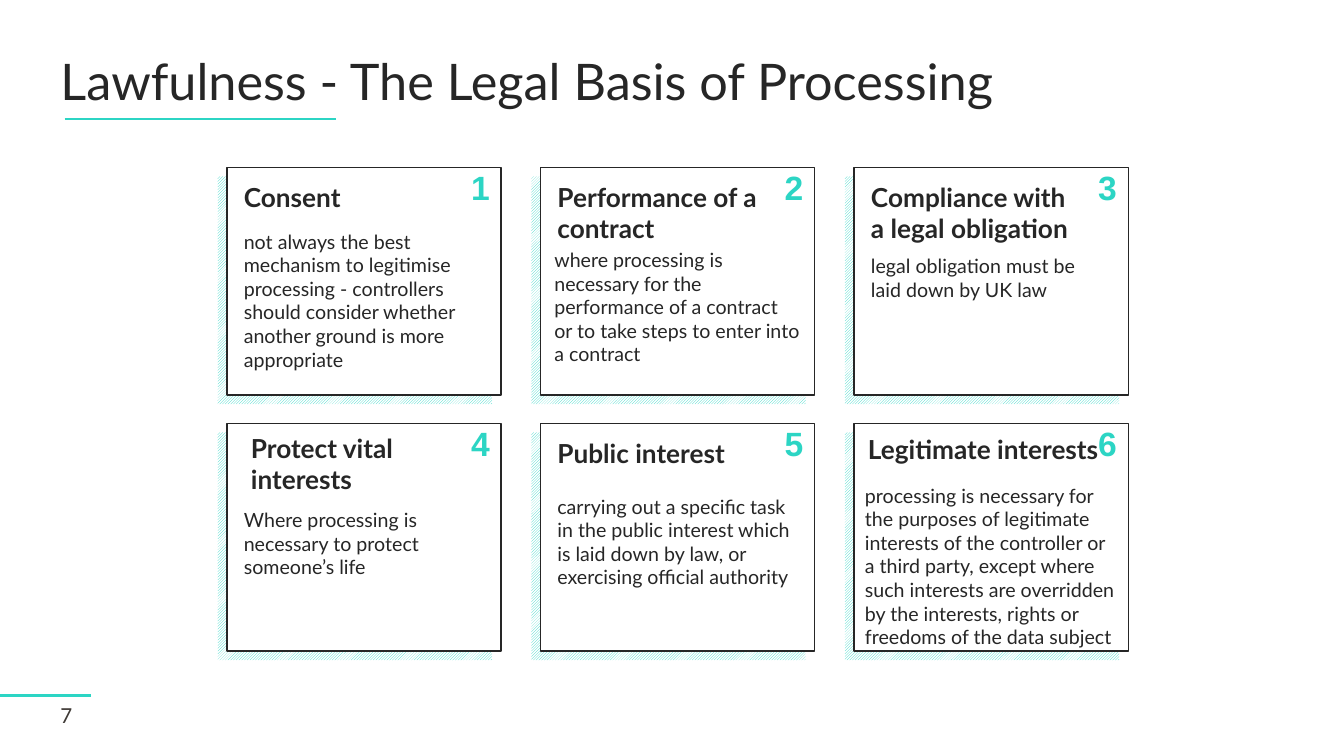
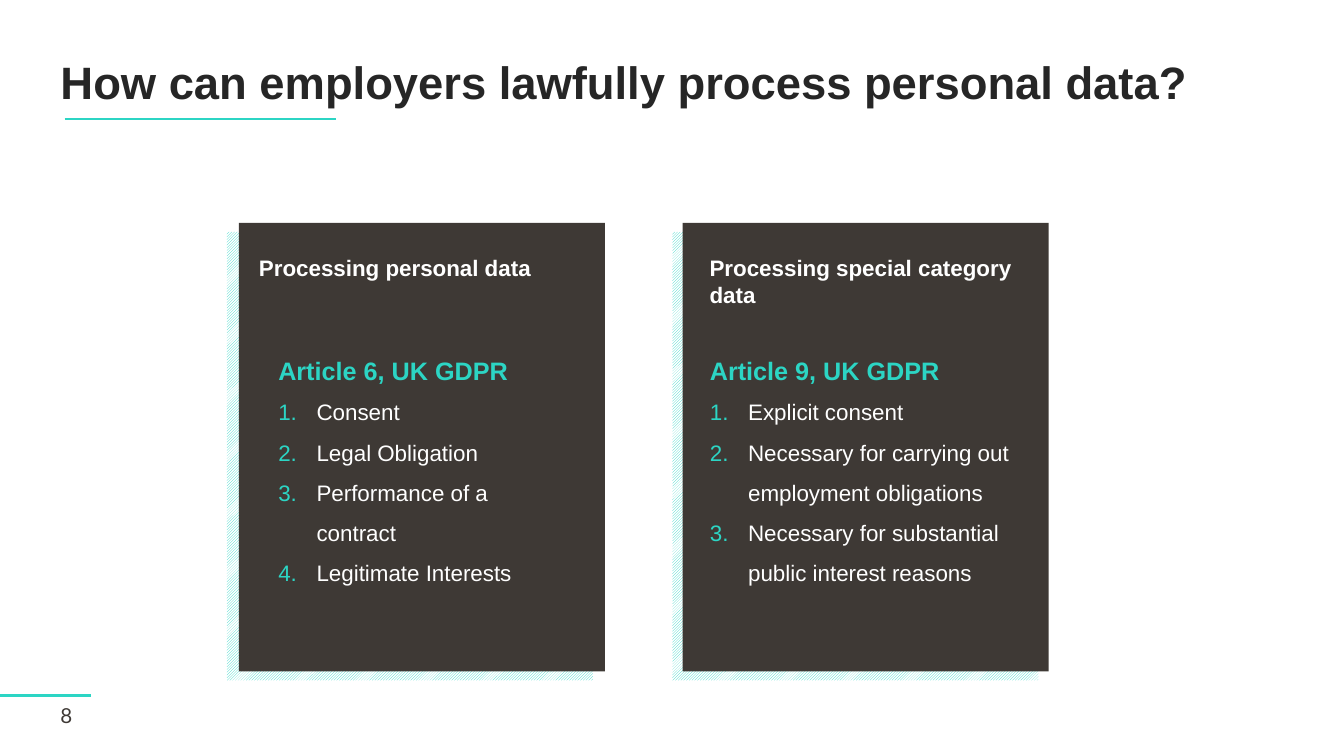
from lxml.etree import SubElement
from pptx import Presentation
from pptx.dml.color import RGBColor
from pptx.enum.dml import MSO_PATTERN
from pptx.enum.shapes import MSO_CONNECTOR, MSO_SHAPE
from pptx.enum.text import MSO_ANCHOR, MSO_AUTO_SIZE, PP_ALIGN
from pptx.oxml.ns import qn
from pptx.util import Inches, Pt

COLORS = {"teal": "2CD5C4", "ink": "262626", "brown": "3E3935", "white": "FFFFFF"}

CARDS = [
    ("Consent", (0.07, 0.09, 2.18, 0.42),
     "not always the best mechanism to legitimise processing - controllers "
     "should consider whether another ground is more appropriate",
     (0.07, 0.57, 2.54, 1.51)),
    ("Performance of a contract", (0.07, 0.09, 2.18, 0.73),
     "where processing is necessary for the performance of a contract "
     "or to take steps to enter into a contract",
     (0.04, 0.75, 2.64, 1.28)),
    ("Compliance with a legal obligation", (0.07, 0.09, 2.18, 0.73),
     "legal obligation must be laid down by UK law",
     (0.07, 0.81, 2.54, 0.57)),
    ("Protect vital interests", (0.14, 0.04, 2.36, 0.73),
     "Where processing is necessary to protect someone’s life",
     (0.07, 0.79, 2.54, 0.81)),
    ("Public interest", (0.07, 0.09, 2.18, 0.42),
     "carrying out a specific task in the public interest which is laid down "
     "by law, or\nexercising official authority",
     (0.07, 0.66, 2.54, 1.04)),
    ("Legitimate interests", (0.04, 0.05, 2.54, 0.42),
     "processing is necessary for the purposes of legitimate interests of the "
     "controller or a third party, except where such interests are overridden "
     "by the interests, rights or freedoms of the data subject",
     (0.01, 0.55, 2.72, 1.75)),
]

PANELS = [
    (2.37, 0.12, "Processing personal data", (2.47, 2.47, 3.12, 0.37),
     "Article 6, UK GDPR", (2.66, 3.32, 2.85, 2.57),
     ["Consent", "Legal Obligation", "Performance of a contract",
      "Legitimate Interests"]),
    (6.77, 0.1, "Processing special category data", (6.94, 2.47, 3.3, 0.64),
     "Article 9, UK GDPR", (6.94, 3.32, 3.3, 2.63),
     ["Explicit consent", "Necessary for carrying out employment obligations",
      "Necessary for substantial public interest reasons"]),
]


def tint(name):
    """Return a named colour."""
    return RGBColor.from_string(COLORS[name])


def place(shape, area):
    """Move and size a shape, in inches."""
    shape.left, shape.top, shape.width, shape.height = map(Inches, area)


def style(par, size, color, font="Lato", bold=False):
    """Format the runs of a paragraph."""
    for run in par.runs:
        run.font.size = Pt(size)
        run.font.name = font
        run.font.bold = bold
        run.font.color.rgb = tint(color)


def inset(frame, side, edge):
    """Set the margins of a text frame."""
    frame.margin_left = frame.margin_right = Inches(side)
    frame.margin_top = frame.margin_bottom = Inches(edge)


def write(slide, area, text, size, color, font="Lato", bold=False):
    """Add a wrapped text box and return its frame."""
    frame = slide.shapes.add_textbox(*map(Inches, area)).text_frame
    frame.word_wrap = True
    frame.auto_size = MSO_AUTO_SIZE.SHAPE_TO_FIT_TEXT
    frame.text = text
    for par in frame.paragraphs:
        style(par, size, color, font, bold)
    return frame


def rule(slide, left, right, top):
    """Draw a level teal line."""
    line = slide.shapes.add_connector(
        MSO_CONNECTOR.STRAIGHT, *map(Inches, (left, top, right, top)))
    line.line.color.rgb = tint("teal")
    line.line.width = Pt(1.5)
    SubElement(line._element.spPr, qn("a:effectLst"))


def box(shapes, area):
    """Add a plain rectangle with neither line nor shadow."""
    shape = shapes.add_shape(MSO_SHAPE.RECTANGLE, *map(Inches, area))
    shape.shadow.inherit = False
    shape.line.fill.background()
    return shape


def panel(shapes, area, shift, color):
    """Add a filled box above a hatched one and return the filled box."""
    left, top, width, height = area
    hatch = box(shapes, (left - shift, top + 0.09, width, height)).fill
    hatch.patterned()
    hatch.pattern = MSO_PATTERN.DARK_UPWARD_DIAGONAL
    hatch.fore_color.rgb = tint("teal")
    hatch.back_color.rgb = tint("white")
    front = box(shapes, area)
    front.fill.solid()
    front.fill.fore_color.rgb = tint(color)
    return front


def start(deck, layout, number, text, size, font="Lato", bold=False):
    """Add a slide with its title, rules and number."""
    slide = deck.slides.add_slide(deck.slide_layouts[layout])
    rule(slide, 0.64, 3.33, 1.18)
    rule(slide, 0, 0.9, 6.9)
    title = slide.shapes.title
    place(title, (0.53, 0.4, 12.24, 0.88))
    frame = title.text_frame
    frame.text = text
    frame.auto_size = MSO_AUTO_SIZE.NONE
    frame.vertical_anchor = MSO_ANCHOR.MIDDLE
    inset(frame, 0.07, 0.04)
    par = frame.paragraphs[0]
    par.alignment = PP_ALIGN.LEFT
    par.line_spacing = 0.9
    style(par, size, "ink", font, bold)
    foot = write(slide, (0.53, 6.98, 0.57, 0.24), str(number), 14.7, "brown")
    foot.auto_size = MSO_AUTO_SIZE.NONE
    foot.vertical_anchor = MSO_ANCHOR.MIDDLE
    inset(foot, 0.07, 0.04)
    return slide


def card(slide, index, head, spot, body, room):
    """Add one numbered card of the grid."""
    row, col = divmod(index, 3)
    left, top = 2.25 + 3.11 * col, 1.66 + 2.54 * row
    group = slide.shapes.add_group_shape()
    front = panel(group.shapes, (left, top, 2.72, 2.26), 0.09, "white")
    front.line.color.rgb = tint("ink")
    front.line.width = Pt(1)
    for text, area, size, bold in ((head, spot, 18.7, True), (body, room, 14, False)):
        dx, dy, width, height = area
        write(slide, (left + dx, top + dy, width, height), text, size, "ink", bold=bold)
    badge = write(slide, (left + 2.23, top - 0.05, 0.57, 0.5),
                  str(index + 1), 24, "teal", "Arial", True)
    badge.vertical_anchor = MSO_ANCHOR.MIDDLE
    badge.paragraphs[0].alignment = PP_ALIGN.CENTER


def mark(par, listed):
    """Number a list item, or clear the bullet of a heading."""
    props = par._p.get_or_add_pPr()
    hang = Inches(0.38) if listed else 0
    props.set("marL", str(hang))
    props.set("indent", str(-hang))
    if listed:
        hue = SubElement(props, qn("a:buClr"))
        SubElement(hue, qn("a:srgbClr"), val=COLORS["teal"])
        SubElement(props, qn("a:buFont"), typeface="+mj-lt")
        SubElement(props, qn("a:buAutoNum"), type="arabicPeriod")
    else:
        SubElement(props, qn("a:buNone"))


def fill_list(holder, area, head, items):
    """Fill a body placeholder with a heading and numbered items."""
    place(holder, area)
    frame = holder.text_frame
    frame.text = "\n".join([head, *items])
    frame.word_wrap = True
    frame.auto_size = MSO_AUTO_SIZE.SHAPE_TO_FIT_TEXT
    for index, par in enumerate(frame.paragraphs):
        mark(par, index > 0)
        par.line_spacing = 1.5
        par.space_before = Pt(0)
        if index:
            style(par, 16, "white", "Arial")
        else:
            style(par, 18, "teal", "Arial", True)


def main():
    """Build and save both slides."""
    deck = Presentation()
    deck.slide_width, deck.slide_height = Inches(13.33), Inches(7.5)

    slide = start(deck, 5, 7, "Lawfulness - The Legal Basis of Processing", 36)
    for index, entry in enumerate(CARDS):
        card(slide, index, *entry)

    slide = start(deck, 3, 8, "How can employers lawfully process personal data?",
                  32.4, "Arial", True)
    for index, (left, shift, head, spot, lead, room, items) in enumerate(PANELS, 1):
        panel(slide.shapes, (left, 2.21, 3.63, 4.45), shift, "brown")
        write(slide, spot, head, 16, "white", "Arial", True)
        holder = slide.placeholders[index]
        fill_list(holder, room, lead, items)
        slide.shapes._spTree.append(holder._element)

    deck.save("out.pptx")


if __name__ == "__main__":
    main()
